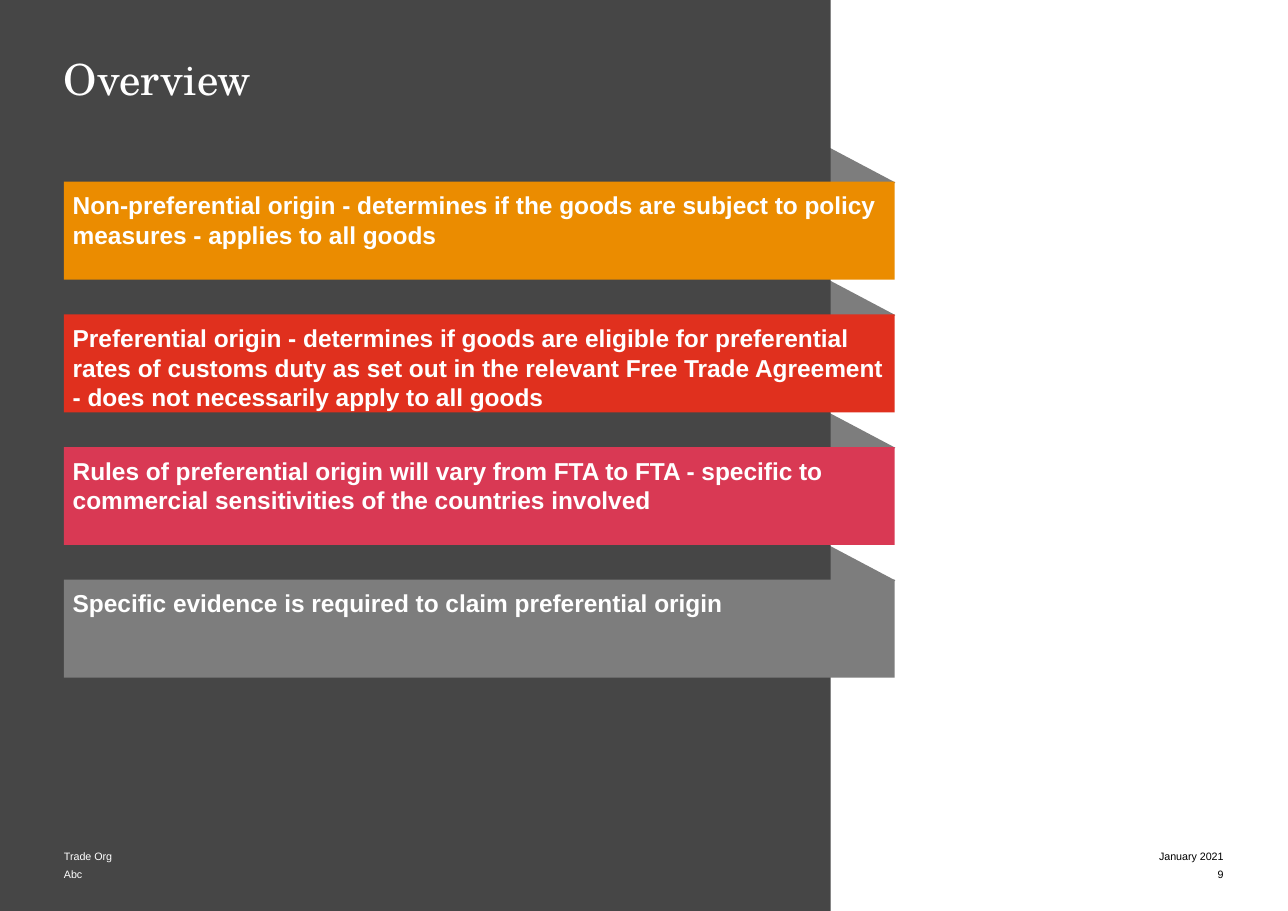
from pptx import Presentation
from pptx.dml.color import RGBColor
from pptx.enum.shapes import MSO_SHAPE as Shape
from pptx.enum.text import MSO_ANCHOR as Anchor, MSO_AUTO_SIZE as AutoSize, PP_ALIGN as Align
from pptx.util import Pt

COLOURS = {
    "panel": "464646", "fold": "7D7D7D", "light": "FFFFFF", "dark": "000000",
    "orange": "EB8C00", "red": "E0301E", "rose": "D93954", "grey": "7D7D7D",
}
STATEMENTS = [
    ("orange", "Non-preferential origin - determines if the goods are subject to policy "
               "measures - applies to all goods"),
    ("red", "Preferential origin - determines if goods are eligible for preferential rates of "
            "customs duty as set out in the relevant Free Trade Agreement - does not "
            "necessarily apply to all goods"),
    ("rose", "Rules of preferential origin will vary from FTA to FTA - specific to commercial "
             "sensitivities of the countries involved"),
    ("grey", "Specific evidence is required to claim preferential origin"),
]
FOOTER = [("Trade Org", "January 2021"), ("Abc", "9")]


def apply(target, values):
    """Set each attribute in a dict of format values."""
    for name, value in values.items():
        setattr(target, name, value)


def write(box, text, colour, font, inset=0, anchor=Anchor.TOP, **layout):
    """Fill a box with one formatted paragraph."""
    frame = box.text_frame
    margins = {f"margin_{side}": Pt(inset) for side in ("left", "top", "right", "bottom")}
    apply(frame, margins | {"word_wrap": True, "auto_size": AutoSize.NONE, "vertical_anchor": anchor})
    para = frame.paragraphs[0]
    apply(para, {"alignment": Align.LEFT} | layout)
    span = para.add_run()
    span.text = text
    apply(span.font, font)
    span.font.color.rgb = RGBColor.from_string(COLOURS[colour])


def add_block(page, kind, place, colour):
    """Add a flat filled shape at a place given in points."""
    block = page.shapes.add_shape(kind, *map(Pt, place))
    block.shadow.inherit = False
    block.fill.solid()
    block.fill.fore_color.rgb = RGBColor.from_string(COLOURS[colour])
    block.line.fill.background()
    return block


def add_panel(page, left, top, width, height):
    """Add the dark panel and bring the title in front of it."""
    add_block(page, Shape.RECTANGLE, (left, top, width, height), "panel")
    title = page.shapes.title
    title.element.getparent().append(title.element)
    apply(title, {"left": Pt(left + 41.8), "top": Pt(top + 39.6), "width": Pt(757.4), "height": Pt(71.3)})
    write(title, "Overview", "light", {"name": "TeX Gyre Schola", "size": Pt(28)}, line_spacing=0.85)


def add_folds(page, left, top, pitch):
    """Add the turned triangles that show behind the bar ends."""
    for index in range(len(STATEMENTS)):
        fold = add_block(page, Shape.ISOSCELES_TRIANGLE,
                         (left + 447.1, top - 43.9 + index * pitch, 83.5, 72), "fold")
        fold.rotation = 328


def add_bars(page, left, top, width, height, pitch):
    """Add the stack of coloured statement bars."""
    font = {"name": "Arial", "size": Pt(16), "bold": True}
    for index, (colour, text) in enumerate(STATEMENTS):
        bar = add_block(page, Shape.RECTANGLE, (left, top + index * pitch, width, height), colour)
        write(bar, text, "light", font, inset=5.76)


def add_footer(page, left, top, width, row_height):
    """Add the footer rows with text at both ends."""
    font = {"name": "Arial", "size": Pt(7)}
    for row, (start, end) in enumerate(FOOTER):
        ends = [(start, left, 366.5, "light", Align.LEFT),
                (end, left + width - 118, 118, "dark", Align.RIGHT)]
        for text, edge, span_width, colour, alignment in ends:
            place = (edge, top + row * row_height, span_width, row_height)
            box = page.shapes.add_textbox(*map(Pt, place))
            write(box, text, colour, font, anchor=Anchor.BOTTOM, alignment=alignment)


def main():
    """Build the overview slide."""
    deck = Presentation()
    apply(deck, {"slide_width": Pt(841.68), "slide_height": Pt(595.44)})
    page = deck.slides.add_slide(deck.slide_layouts[5])
    add_folds(page, 41.8, 118.8, 86.7)
    add_panel(page, 0, 0, 542.9, 595.44)
    add_footer(page, 41.8, 551.5, 757.8, 12.2)
    add_bars(page, 41.8, 118.8, 542.9, 64, 86.7)
    deck.save("out.pptx")


if __name__ == "__main__":
    main()
